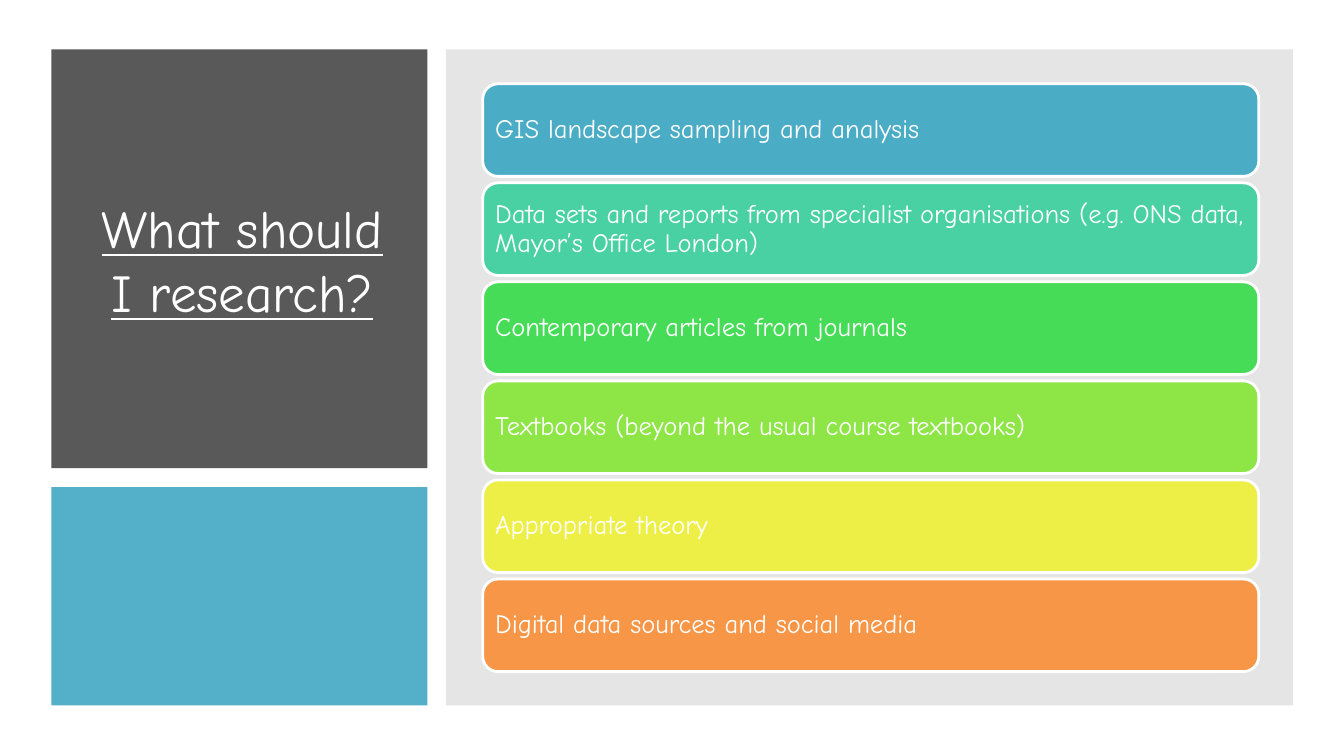
from dataclasses import dataclass

from lxml import etree
from pptx import Presentation
from pptx.dml.color import RGBColor
from pptx.enum.shapes import MSO_SHAPE as Shape
from pptx.enum.text import MSO_ANCHOR as Anchor, MSO_AUTO_SIZE as AutoSize, PP_ALIGN as Align
from pptx.oxml.ns import qn
from pptx.util import Pt


@dataclass(frozen=True)
class Theme:
    font: str = "Comic Neue"
    title_size: int = 38
    item_size: int = 19
    white: str = "FFFFFF"
    dark: str = "595959"
    accent: str = "4BACC6"
    grey: str = "808080"


theme = Theme()


def add_box(kind, left, top, width, height, color, opacity=100):
    """Add a filled, shadowless shape without an outline; opacity is in percent."""
    sp = s.shapes.add_shape(kind, Pt(left), Pt(top), Pt(width), Pt(height))
    sp.shadow.inherit = False
    sp.fill.solid()
    sp.fill.fore_color.rgb = RGBColor.from_string(color)
    sp.line.fill.background()
    if opacity < 100:
        clr = sp.element.spPr.find(".//" + qn("a:srgbClr"))
        etree.SubElement(clr, qn("a:alpha"), val=str(opacity * 1000))
    return sp


def write(sp, text, size, align=Align.LEFT, underline=False, spacing=1.0):
    tf = sp.text_frame
    tf.word_wrap = True
    tf.auto_size = AutoSize.NONE
    tf.vertical_anchor = Anchor.MIDDLE
    p = tf.paragraphs[0]
    p.alignment = align
    p.line_spacing = spacing
    r = p.add_run()
    r.text = text
    r.font.name = theme.font
    r.font.size = Pt(size)
    r.font.underline = underline
    r.font.color.rgb = RGBColor.from_string(theme.white)


prs = Presentation()
prs.slide_width, prs.slide_height = Pt(960), Pt(540)
s = prs.slides.add_slide(prs.slide_layouts[5])

# Panels
title_panel = add_box(Shape.RECTANGLE, 36.8, 35.3, 268.6, 299.2, theme.dark)
add_box(Shape.RECTANGLE, 36.8, 347.9, 268.6, 156, theme.accent, opacity=95)
add_box(Shape.RECTANGLE, 318.5, 35.3, 605.3, 468.6, theme.grey, opacity=20)

# Title, in front of its panel
title = s.shapes.title
title_panel.element.addnext(title.element)
title.left, title.top, title.width, title.height = Pt(61.2), Pt(57.6), Pt(223.9), Pt(254.9)
write(title, "What should I research?", theme.title_size, Align.CENTER, underline=True)

# Research sources
sources = [
    ("GIS landscape sampling and analysis", theme.accent),
    ("Data sets and reports from specialist organisations (e.g. ONS data, Mayor’s Office London)", "49D1A3"),
    ("Contemporary articles from journals", "47DC57"),
    ("Textbooks (beyond the usual course textbooks)", "8DE646"),
    ("Appropriate theory", "EEEF46"),
    ("Digital data sources and social media", "F79646"),
]
first_top, pitch = 59.8, 70.75
for i, (text, color) in enumerate(sources):
    bar = add_box(Shape.ROUNDED_RECTANGLE, 344.8, first_top + i * pitch, 554.4, 66.2, color)
    bar.line.color.rgb = RGBColor.from_string(theme.white)
    bar.line.width = Pt(2)
    tf = bar.text_frame
    tf.margin_left = tf.margin_right = tf.margin_top = tf.margin_bottom = Pt(5.7)
    write(bar, text, theme.item_size, spacing=0.9)

prs.save("out.pptx")
